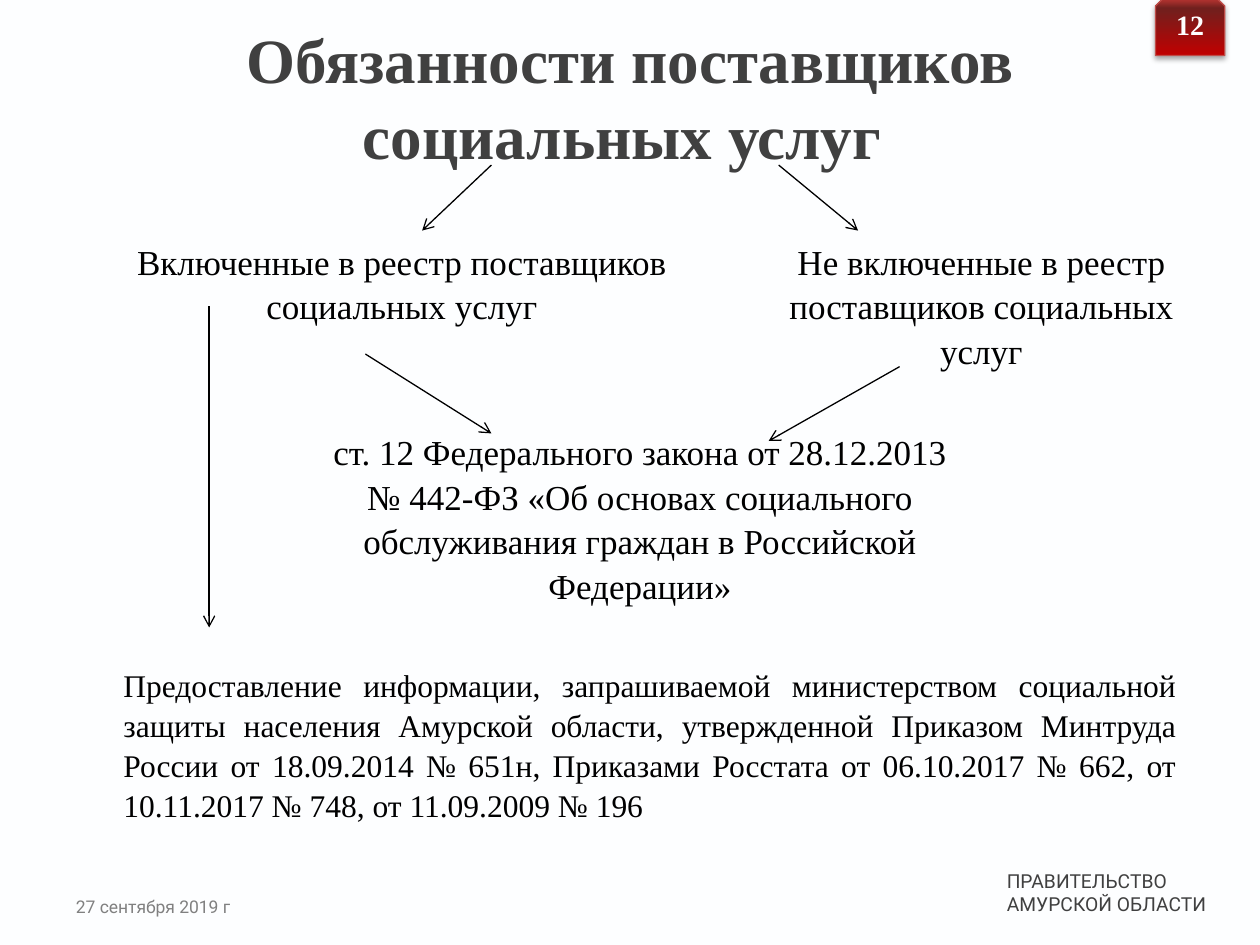
from dataclasses import dataclass

from lxml.etree import SubElement
from pptx import Presentation
from pptx.dml.color import RGBColor
from pptx.enum.shapes import MSO_CONNECTOR, MSO_SHAPE
from pptx.enum.text import MSO_ANCHOR, PP_ALIGN
from pptx.oxml import parse_xml
from pptx.oxml.ns import nsdecls, qn
from pptx.util import Inches, Pt


@dataclass(frozen=True)
class Theme:
    serif: str = "Times New Roman"
    sans: str = "Roboto"
    background: str = "FDFEFF"
    ink: str = "000000"
    dark: str = "404040"
    gray: str = "808080"
    white: str = "FFFFFF"
    badge_line: str = "BF4C48"
    badge_stops: tuple = ((0, "C00000"), (80, "70201E"), (100, "CE3B37"))
    title: float = 36
    duty: float = 20
    detail: float = 18
    number: float = 16
    footer: float = 11
    date: float = 10
    empty_cell: float = 8
    line: float = 0.75


THEME = Theme()


@dataclass(frozen=True)
class Style:
    font: str
    size: float
    color: str
    align: PP_ALIGN = PP_ALIGN.CENTER
    bold: bool = False
    spacing: float = 1.0


@dataclass(frozen=True)
class Label:
    area: tuple
    lines: tuple
    style: Style
    margin: tuple = (0.1, 0.05)
    anchor: MSO_ANCHOR = MSO_ANCHOR.TOP


@dataclass(frozen=True)
class Entry:
    row: int
    first: int
    last: int
    text: str = ""
    style: Style | None = None


@dataclass(frozen=True)
class Arrow:
    start: tuple
    end: tuple


DUTY = Style(THEME.serif, THEME.duty, THEME.ink, spacing=1.15)
DETAIL = Style(THEME.serif, THEME.detail, THEME.ink, PP_ALIGN.JUSTIFY, spacing=1.15)

LABELS = (
    Label((7.99, 6.9, 1.89, 0.37), ("ПРАВИТЕЛЬСТВО", "АМУРСКОЙ ОБЛАСТИ"),
          Style(THEME.sans, THEME.footer, THEME.dark, PP_ALIGN.LEFT), (0, 0)),
    Label((0.5, 0.3, 9, 0.93), ("Обязанности поставщиков социальных услуг ",),
          Style(THEME.serif, THEME.title, THEME.dark, bold=True),
          anchor=MSO_ANCHOR.MIDDLE),
    Label((9.17, 0.01, 0.55, 0.43), ("12",),
          Style(THEME.serif, THEME.number, THEME.white, bold=True)),
    Label((0.35, 7.06, 1.73, 0.31), ("27 сентября 2019 г",),
          Style(THEME.sans, THEME.date, THEME.gray)),
)

COLUMNS = (1.57, 0.78, 0.9, 0.61, 0.35, 0.35, 0.35, 0.35, 0.7, 0.81, 1.73)
ROWS = (0.22, 0.36, 1.19, 0.32, 1.65, 0.22, 1.66)
ENTRIES = (
    Entry(0, 0, 10),
    Entry(1, 0, 5), Entry(1, 6, 7), Entry(1, 8, 10),
    Entry(2, 0, 5, "Включенные в реестр поставщиков социальных услуг", DUTY),
    Entry(2, 6, 7),
    Entry(2, 8, 10, "Не включенные в реестр поставщиков социальных услуг", DUTY),
    Entry(3, 0, 4), Entry(3, 5, 6), Entry(3, 7, 10),
    Entry(4, 1, 9, "ст. 12 Федерального закона от 28.12.2013 № 442-ФЗ «Об основах "
          "социального обслуживания граждан в Российской Федерации»", DUTY),
    Entry(5, 0, 1), Entry(5, 4, 8), Entry(5, 9, 10),
    Entry(6, 0, 10, "Предоставление информации, запрашиваемой министерством социальной "
          "защиты населения Амурской области, утвержденной Приказом Минтруда России "
          "от 18.09.2014 № 651н, Приказами Росстата от 06.10.2017 № 662, "
          "от 10.11.2017 № 748, от 11.09.2009 № 196", DETAIL),
)

ARROWS = (
    Arrow((3.9, 1.31), (3.35, 1.83)),
    Arrow((6.18, 1.31), (6.81, 1.83)),
    Arrow((2.9, 2.81), (3.9, 3.44)),
    Arrow((7.14, 2.91), (6.1, 3.5)),
    Arrow((1.66, 2.43), (1.66, 4.98)),
)


def set_values(target, values: dict) -> None:
    for name, value in values.items():
        setattr(target, name, value)


def write(para, text: str, style: Style) -> None:
    set_values(para, {"alignment": style.align, "line_spacing": style.spacing})
    span = para.add_run()
    span.text = text
    set_values(span.font, {"name": style.font, "size": Pt(style.size), "bold": style.bold})
    span.font.color.rgb = RGBColor.from_string(style.color)


def add_label(page, label: Label) -> None:
    box = page.shapes.add_textbox(*map(Inches, label.area))
    frame = box.text_frame
    side, edge = map(Inches, label.margin)
    set_values(frame, {"word_wrap": True, "vertical_anchor": label.anchor,
                       "margin_left": side, "margin_right": side,
                       "margin_top": edge, "margin_bottom": edge})
    for index, text in enumerate(label.lines):
        para = frame.add_paragraph() if index else frame.paragraphs[0]
        write(para, text, label.style)


def add_badge(page) -> None:
    badge = page.shapes.add_shape(MSO_SHAPE.SNIP_2_SAME_RECTANGLE,
                                  *map(Inches, (9.17, -0.03, 0.55, 0.47)))
    badge.line.color.rgb = RGBColor.from_string(THEME.badge_line)
    badge.line.width = Pt(THEME.line)
    stops = "".join(f'<a:gs pos="{place * 1000}"><a:srgbClr val="{color}"/></a:gs>'
                    for place, color in THEME.badge_stops)
    properties = badge.element.spPr
    properties.find(qn("a:ln")).addprevious(parse_xml(
        f'<a:gradFill {nsdecls("a")} rotWithShape="1"><a:gsLst>{stops}</a:gsLst>'
        '<a:lin ang="16200000" scaled="0"/></a:gradFill>'))
    properties.append(parse_xml(
        f'<a:effectLst {nsdecls("a")}><a:outerShdw blurRad="{Pt(3.1)}" dist="{Pt(1.8)}" '
        f'dir="5400000" rotWithShape="0"><a:srgbClr val="{THEME.ink}">'
        '<a:alpha val="35000"/></a:srgbClr></a:outerShdw></a:effectLst>'))


def add_duties(page) -> None:
    area = (0.91, 1.31, sum(COLUMNS), sum(ROWS))
    table = page.shapes.add_table(len(ROWS), len(COLUMNS), *map(Inches, area)).table
    set_values(table, {"first_row": False, "horz_banding": False})
    for column, width in zip(table.columns, COLUMNS):
        column.width = Inches(width)
    for row, height in zip(table.rows, ROWS):
        row.height = Inches(height)

    # Clear cells, without borders or fill
    for cell in table.iter_cells():
        set_values(cell, {"margin_left": Inches(0.07), "margin_right": Inches(0.07),
                          "margin_top": 0, "margin_bottom": 0})
        properties = cell._tc.get_or_add_tcPr()
        for side in ("lnL", "lnR", "lnT", "lnB"):
            SubElement(SubElement(properties, qn(f"a:{side}")), qn("a:noFill"))
        cell.fill.background()
        ending = SubElement(cell.text_frame.paragraphs[0]._p, qn("a:endParaRPr"))
        ending.set("sz", str(THEME.empty_cell * 100))

    # Merged cells and their text
    for entry in ENTRIES:
        cell = table.cell(entry.row, entry.first)
        cell.merge(table.cell(entry.row, entry.last))
        if entry.style:
            write(cell.text_frame.paragraphs[0], entry.text, entry.style)


def add_arrow(page, arrow: Arrow) -> None:
    line = page.shapes.add_connector(MSO_CONNECTOR.STRAIGHT,
                                     *map(Inches, arrow.start + arrow.end))
    line.line.color.rgb = RGBColor.from_string(THEME.ink)
    line.line.width = Pt(THEME.line)
    SubElement(line.line._get_or_add_ln(), qn("a:tailEnd")).set("type", "arrow")
    SubElement(line.element.spPr, qn("a:effectLst"))


def main() -> None:
    deck = Presentation()
    set_values(deck, {"slide_width": Inches(10), "slide_height": Inches(7.5)})
    page = deck.slides.add_slide(deck.slide_layouts[6])
    page.background.fill.solid()
    page.background.fill.fore_color.rgb = RGBColor.from_string(THEME.background)

    add_badge(page)
    for label in LABELS:
        add_label(page, label)
    add_duties(page)
    for arrow in ARROWS:
        add_arrow(page, arrow)
    deck.save("out.pptx")


if __name__ == "__main__":
    main()
